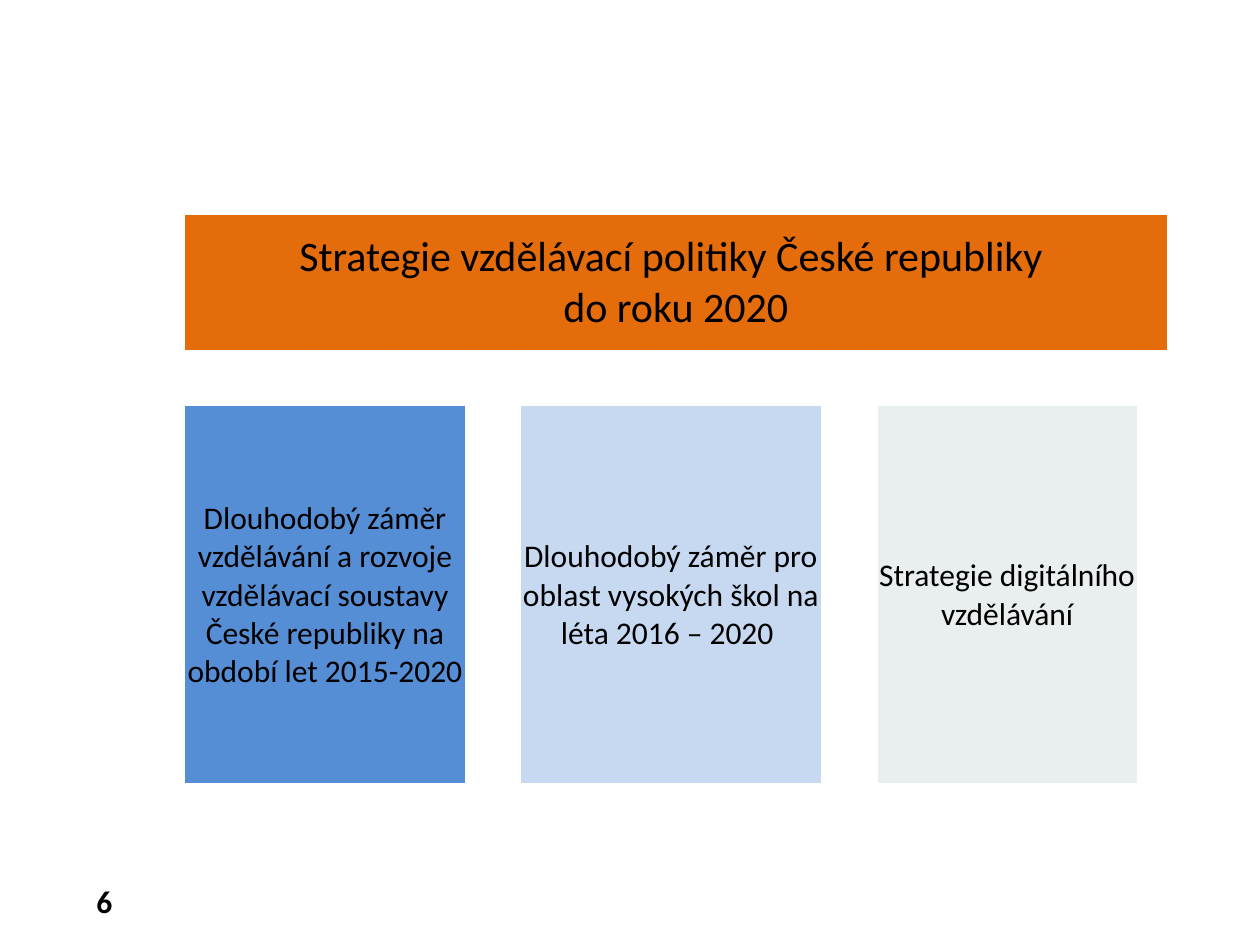
import pptx
import pptx.util
import pptx.dml.color
import pptx.enum.text
from lxml import etree
from pptx.oxml.ns import qn

Inches, Pt = pptx.util.Inches, pptx.util.Pt
ALIGN = pptx.enum.text.PP_ALIGN
MIDDLE = pptx.enum.text.MSO_ANCHOR.MIDDLE

# Content
COLORS = {"white": "FFFFFF", "black": "000000", "orange": "E46C0A",
          "blue": "558ED5", "light blue": "C6D9F1", "grey": "E9EEEF"}
FONT = "Calibri"
COLUMNS = [1.06, 0.55, 0.63, 0.43, 1.06, 0.42, 0.91, 0.44, 2.07, 0.08]
ROWS = [1.08, 0.44, 3, 0.44]
# row, first column, columns spanned, fill, text size, paragraphs
BLOCKS = [
    (0, 0, 10, "orange", 24,
     ["Strategie vzdělávací politiky České republiky ", "do roku 2020"]),
    (2, 0, 3, "blue", 18,
     ["Dlouhodobý záměr vzdělávání a rozvoje vzdělávací soustavy "
      "České republiky na období let 2015-2020 "]),
    (2, 4, 3, "light blue", 18,
     ["Dlouhodobý záměr pro oblast vysokých škol na léta 2016 – 2020 "]),
    (2, 8, 1, "grey", 18, ["Strategie digitálního vzdělávání"]),
]
PAGE_NUMBER = "6"


def rgb(name):
    return pptx.dml.color.RGBColor.from_string(COLORS[name])


def fill_cell(cell, color):
    cell.fill.solid()
    cell.fill.fore_color.rgb = rgb(color)


def add_borders(cell, color, points):
    properties = cell._tc.get_or_add_tcPr()
    for index, side in enumerate(("a:lnL", "a:lnR", "a:lnT", "a:lnB")):
        line = etree.Element(qn(side), w=str(Pt(points)))
        solid = etree.SubElement(line, qn("a:solidFill"))
        etree.SubElement(solid, qn("a:srgbClr"), val=COLORS[color])
        properties.insert(index, line)


def write(frame, lines, size, align, bold=False):
    frame.text = "\n".join(lines)
    for para in frame.paragraphs:
        para.alignment = align
        para.font.name = FONT
        para.font.size = Pt(size)
        para.font.bold = bold
        para.font.color.rgb = rgb("black")


deck = pptx.Presentation()
deck.slide_width, deck.slide_height = Inches(10), Inches(7.5)
page = deck.slides.add_slide(deck.slide_layouts[6])

# Page number
box = page.shapes.add_textbox(Inches(0.28), Inches(6.95), Inches(0.71), Inches(0.4))
box.text_frame.word_wrap = True
box.text_frame.vertical_anchor = MIDDLE
write(box.text_frame, [PAGE_NUMBER], 18, ALIGN.RIGHT, bold=True)

# Table grid, white throughout
table = page.shapes.add_table(len(ROWS), len(COLUMNS), Inches(1.46), Inches(1.7),
                              Inches(sum(COLUMNS)), Inches(sum(ROWS))).table
table.first_row = table.horz_banding = False
for column, width in zip(table.columns, COLUMNS):
    column.width = Inches(width)
for row, height in zip(table.rows, ROWS):
    row.height = Inches(height)
for cell in table.iter_cells():
    fill_cell(cell, "white")
    add_borders(cell, "white", 1)

# Strategy blocks
for row, first, span, color, size, lines in BLOCKS:
    cell = table.cell(row, first)
    if span > 1:
        cell.merge(table.cell(row, first + span - 1))
    fill_cell(cell, color)
    cell.vertical_anchor = MIDDLE
    cell.margin_left = cell.margin_right = cell.margin_top = Inches(0.01)
    cell.margin_bottom = 0
    write(cell.text_frame, lines, size, ALIGN.CENTER)

deck.save("out.pptx")
